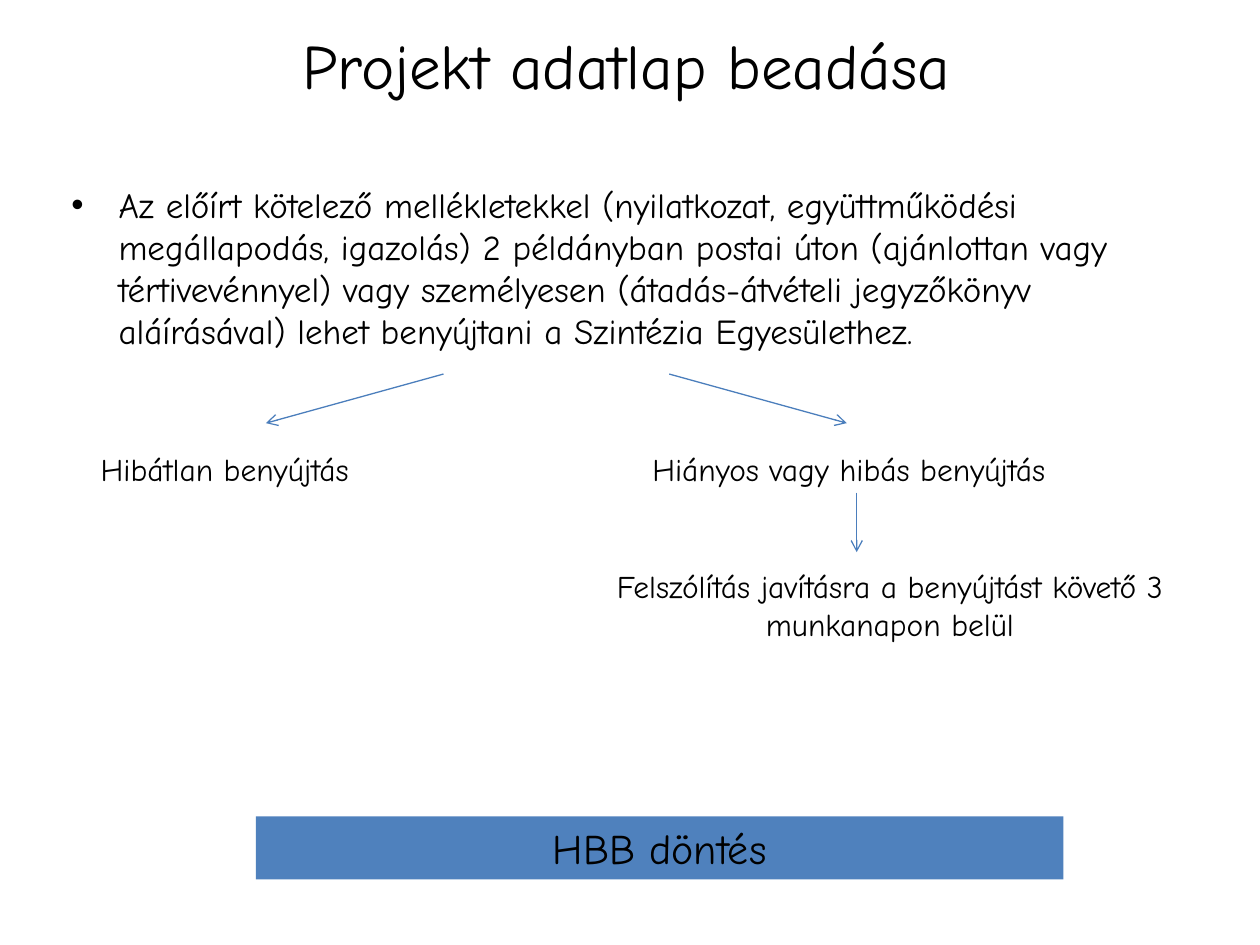
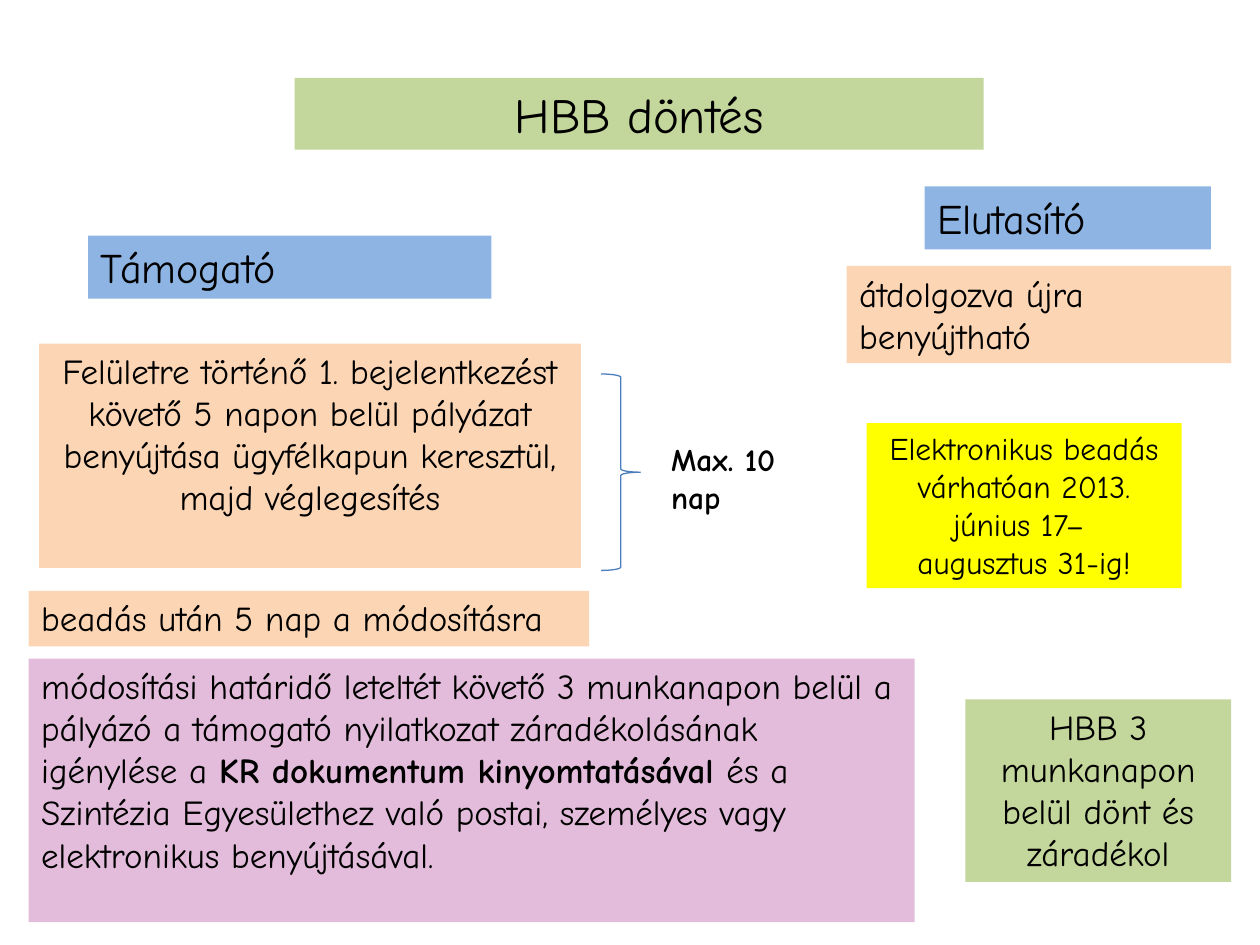
"""Build two slides on handing in a project sheet and the HBB decision."""
import lxml.etree
import pptx
import pptx.dml.color
import pptx.enum.shapes
import pptx.enum.text
import pptx.oxml.ns
import pptx.util

Cm, Pt = pptx.util.Cm, pptx.util.Pt
RGB = pptx.dml.color.RGBColor
ALIGN = pptx.enum.text.PP_ALIGN
ANCHOR = pptx.enum.text.MSO_ANCHOR
SHAPE = pptx.enum.shapes.MSO_SHAPE

BLACK = RGB(0x00, 0x00, 0x00)
BLUE = RGB(0x4F, 0x81, 0xBD)
LINE = RGB(0x4B, 0x7E, 0xBC)
GREEN = RGB(0xC3, 0xD6, 0x9B)
SKY = RGB(0x8E, 0xB4, 0xE3)
PEACH = RGB(0xFC, 0xD5, 0xB5)
PINK = RGB(0xE2, 0xBC, 0xDA)
YELLOW = RGB(0xFF, 0xFF, 0x00)

FONT = {"name": "Comic Neue"}
FRAME = {"word_wrap": True, "auto_size": pptx.enum.text.MSO_AUTO_SIZE.NONE}


def apply(item, values):
    """Set each attribute in values on item."""
    for name, value in values.items():
        setattr(item, name, value)


def add_tag(parent, tag, **attrs):
    """Append an XML child to parent."""
    return lxml.etree.SubElement(parent, pptx.oxml.ns.qn(tag), attrs)


def write(shape, text, size, align=ALIGN.LEFT, anchor=ANCHOR.TOP):
    """Fill a shape with text; newlines split paragraphs, stars mark bold."""
    frame = shape.text_frame
    apply(frame, {**FRAME, "vertical_anchor": anchor})
    for i, line in enumerate(text.split("\n")):
        para = frame.add_paragraph() if i else frame.paragraphs[0]
        para.alignment = align
        for j, part in enumerate(line.split("*")):
            if part:
                run = para.add_run()
                run.text = part
                apply(run.font, {**FONT, "size": Pt(size), "bold": j % 2 == 1})
                run.font.color.rgb = BLACK


def add_text(slide, place, text, size, **layout):
    """Add a plain text box."""
    shape = slide.shapes.add_textbox(*map(Cm, place))
    write(shape, text, size, **layout)
    return shape


def add_box(slide, place, fill, text, size, **layout):
    """Add a filled box with text."""
    shape = slide.shapes.add_shape(SHAPE.RECTANGLE, *map(Cm, place))
    shape.shadow.inherit = False
    shape.fill.solid()
    shape.fill.fore_color.rgb = fill
    shape.line.fill.background()
    write(shape, text, size, **layout)


def add_bullet(slide, place, text, size):
    """Add a bulleted paragraph with a hanging indent."""
    para = add_text(slide, place, text, size).text_frame.paragraphs[0]
    para.space_before = Pt(size * 0.2)
    props = para._p.get_or_add_pPr()
    indent = Cm(0.95)
    props.set("marL", str(indent))
    props.set("indent", str(-indent))
    add_tag(props, "a:buFont", typeface="Arial")
    add_tag(props, "a:buChar", char="•")


def draw_line(shape):
    """Give a shape the thin blue line."""
    shape.line.width = Pt(0.75)
    shape.line.color.rgb = LINE


def add_arrow(slide, start, end):
    """Add an arrow that points at end."""
    kind = pptx.enum.shapes.MSO_CONNECTOR.STRAIGHT
    arrow = slide.shapes.add_connector(kind, *map(Cm, start + end))
    draw_line(arrow)
    add_tag(arrow.line._get_or_add_ln(), "a:tailEnd", type="arrow")
    add_tag(arrow._element.spPr, "a:effectLst")


def add_brace(slide, place):
    """Add a right brace."""
    brace = slide.shapes.add_shape(SHAPE.RIGHT_BRACE, *map(Cm, place))
    brace.shadow.inherit = False
    brace.fill.background()
    draw_line(brace)


def build_sheet(slide):
    """Show how the project sheet is handed in."""
    mid = ALIGN.CENTER
    add_text(slide, (1.19, 0, 22.86, 2.59), "Projekt adatlap beadása", 36,
             align=mid, anchor=ANCHOR.MIDDLE)
    add_bullet(slide, (1.19, 3.58, 22.86, 4.14),
               "Az előírt kötelező mellékletekkel (nyilatkozat, együttműködési "
               "megállapodás, igazolás) 2 példányban postai úton (ajánlottan "
               "vagy tértivevénnyel) vagy személyesen (átadás-átvételi "
               "jegyzőkönyv aláírásával) lehet benyújtani a Szintézia "
               "Egyesülethez.", 20)
    add_text(slide, (1.78, 8.94, 7.75, 1.02), "Hibátlan benyújtás", 18)
    add_text(slide, (12.9, 8.94, 9.53, 1.02), "Hiányos vagy hibás benyújtás", 18)
    add_text(slide, (11.3, 11.3, 13.28, 1.8),
             "Felszólítás javításra a benyújtást követő 3 munkanapon belül",
             18, align=mid)
    for start, end in (((8.94, 7.54), (5.36, 8.53)),
                       ((13.49, 7.54), (17.07, 8.53)),
                       ((17.27, 9.93), (17.27, 11.13))):
        add_arrow(slide, start, end)
    add_box(slide, (5.16, 16.46, 16.28, 1.27), BLUE, "HBB döntés", 24, align=mid)


def build_vote(slide):
    """Show the outcomes of the HBB decision."""
    mid = ALIGN.CENTER
    for place, fill, text, size, align in (
        ((5.94, 1.57, 13.89, 1.45), GREEN, "HBB döntés", 28, mid),
        ((1.78, 4.75, 8.13, 1.27), SKY, "Támogató", 24, ALIGN.LEFT),
        ((18.64, 3.76, 5.77, 1.27), SKY, "Elutasító", 24, ALIGN.LEFT),
        ((0.79, 6.93, 10.92, 4.52), PEACH,
         "Felületre történő 1. bejelentkezést követő 5 napon belül pályázat "
         "benyújtása ügyfélkapun keresztül, majd véglegesítés", 20, mid),
        ((0.58, 11.91, 11.3, 1.12), PEACH,
         "beadás után 5 nap a módosításra", 20, ALIGN.JUSTIFY),
        ((17.07, 5.36, 7.75, 1.96), PEACH,
         "átdolgozva újra benyújtható", 20, ALIGN.LEFT),
        ((0.58, 13.28, 17.86, 5.31), PINK,
         "módosítási határidő leteltét követő 3 munkanapon belül a pályázó a "
         "támogató nyilatkozat záradékolásának igénylése a *KR dokumentum "
         "kinyomtatásával *és a Szintézia Egyesülethez való postai, személyes "
         "vagy elektronikus benyújtásával.", 20, ALIGN.LEFT),
        ((17.47, 8.53, 6.35, 3.33), YELLOW,
         "Elektronikus beadás várhatóan 2013. június 17– \naugusztus 31-ig!",
         18, mid),
        ((19.46, 14.1, 5.36, 3.68), GREEN,
         "HBB 3 munkanapon belül dönt és záradékol", 20, mid),
    ):
        add_box(slide, place, fill, text, size, align=align)
    add_brace(slide, (12.12, 7.54, 0.79, 3.96))
    add_text(slide, (13.28, 8.74, 2.97, 1.8), "*Max. 10 nap*", 18)


def main():
    """Build and save the slides."""
    deck = pptx.Presentation()
    apply(deck, {"slide_width": Cm(25.4), "slide_height": Cm(19.05)})
    for build in (build_sheet, build_vote):
        build(deck.slides.add_slide(deck.slide_layouts[6]))
    deck.save("out.pptx")


if __name__ == "__main__":
    main()
